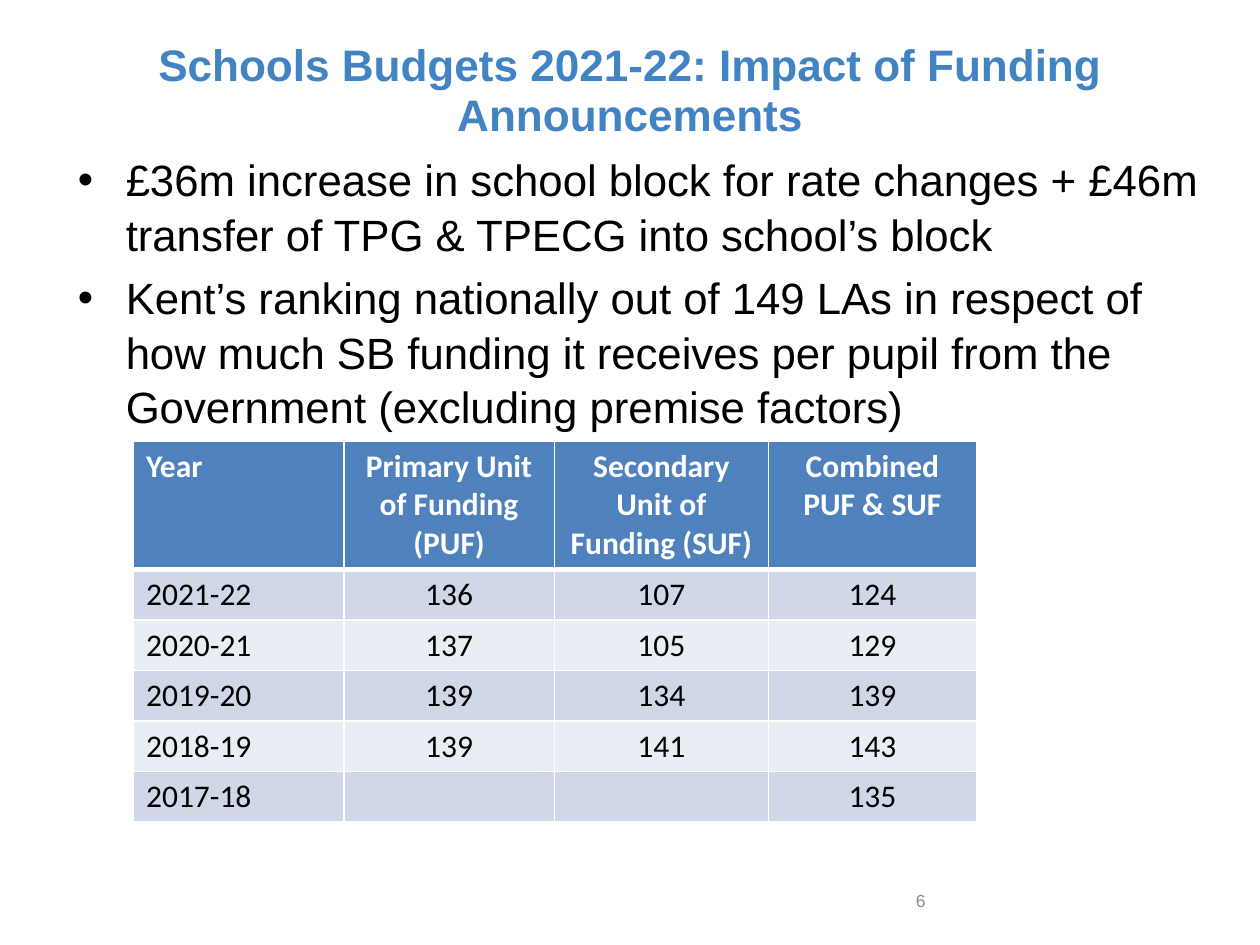
from pptx import Presentation
from pptx import util as u
from pptx.dml.color import RGBColor
from pptx.enum import text as t
from pptx.oxml import parse_xml
from pptx.oxml.ns import nsdecls

BULLETS = [
    "£36m increase in school block for rate changes + £46m transfer of TPG & TPECG into school’s block",
    "Kent’s ranking nationally out of 149 LAs in respect of how much SB funding it receives per pupil "
    "from the Government (excluding premise factors)",
]
RANKINGS = [
    ["Year", "Primary Unit of Funding (PUF)", "Secondary Unit of Funding (SUF)", "Combined PUF & SUF"],
    ["2021-22", "136", "107", "124"],
    ["2020-21", "137", "105", "129"],
    ["2019-20", "139", "134", "139"],
    ["2018-19", "139", "141", "143"],
    ["2017-18", "", "", "135"],
]
COLUMN_WIDTHS = [1.67, 1.67, 1.7, 1.65]
HEADER_HEIGHT = 1.02
ROW_HEIGHT = 0.4


def color(value):
    return RGBColor.from_string(value)


def write(paragraph, content, size=18, font="Arial", fill="000000", bold=False,
          align=t.PP_ALIGN.LEFT, spacing=None, before=None, after=None):
    paragraph.alignment = align
    paragraph.line_spacing = spacing
    if before is not None:
        paragraph.space_before = u.Pt(before)
    if after is not None:
        paragraph.space_after = u.Pt(after)
    paragraph.font.size = u.Pt(size)
    if content:
        run = paragraph.add_run()
        run.text = content
        run.font.size = u.Pt(size)
        run.font.name = font
        run.font.bold = bold
        run.font.color.rgb = color(fill)


def add_box(slide, box, anchor=t.MSO_ANCHOR.TOP):
    frame = slide.shapes.add_textbox(*map(u.Inches, box)).text_frame
    frame.word_wrap = True
    frame.vertical_anchor = anchor
    return frame


def add_title(slide, box):
    frame = add_box(slide, box, t.MSO_ANCHOR.MIDDLE)
    write(frame.paragraphs[0], "Schools Budgets 2021-22: Impact of Funding Announcements",
          size=25.2, fill="4283C4", bold=True, align=t.PP_ALIGN.CENTER, spacing=0.95)


def add_bullets(slide, box):
    frame = add_box(slide, box)
    for index, content in enumerate(BULLETS):
        paragraph = frame.add_paragraph() if index else frame.paragraphs[0]
        properties = paragraph._p.get_or_add_pPr()
        properties.set("marL", str(u.Inches(0.38)))
        properties.set("indent", str(u.Inches(-0.38)))
        properties.append(parse_xml(f'<a:buFont {nsdecls("a")} typeface="Arial"/>'))
        properties.append(parse_xml(f'<a:buChar {nsdecls("a")} char="•"/>'))
        write(paragraph, content, size=25, spacing=1.04, before=5 if index else 0)


def add_borders(cell, bottom):
    properties = cell._tc.get_or_add_tcPr()
    for index, (side, width) in enumerate([("L", 1), ("R", 1), ("T", 1), ("B", bottom)]):
        properties.insert(index, parse_xml(
            f'<a:ln{side} {nsdecls("a")} w="{u.Pt(width)}"><a:solidFill>'
            f'<a:srgbClr val="FFFFFF"/></a:solidFill></a:ln{side}>'))


def add_ranking_table(slide, left, top):
    height = HEADER_HEIGHT + ROW_HEIGHT * (len(RANKINGS) - 1)
    box = (left, top, sum(COLUMN_WIDTHS), height)
    table = slide.shapes.add_table(len(RANKINGS), len(COLUMN_WIDTHS), *map(u.Inches, box)).table
    for column, width in zip(table.columns, COLUMN_WIDTHS):
        column.width = u.Inches(width)
    for row, values in enumerate(RANKINGS):
        header = row == 0
        table.rows[row].height = u.Inches(HEADER_HEIGHT if header else ROW_HEIGHT)
        background = "4F81BD" if header else ("E9EDF4", "D0D8E8")[row % 2]
        for column, value in enumerate(values):
            cell = table.cell(row, column)
            cell.fill.solid()
            cell.fill.fore_color.rgb = color(background)
            add_borders(cell, 3 if header else 1)
            write(cell.text_frame.paragraphs[0], value, font="Calibri", bold=header,
                  fill="FFFFFF" if header else "000000",
                  align=t.PP_ALIGN.CENTER if column else t.PP_ALIGN.LEFT)


def add_slide_number(slide, box):
    frame = add_box(slide, box, t.MSO_ANCHOR.MIDDLE)
    write(frame.paragraphs[0], "6", size=10, fill="8C8C8C", after=6)


def main():
    presentation = Presentation()
    presentation.slide_width = u.Inches(10)
    presentation.slide_height = u.Inches(7.5)
    slide = presentation.slides.add_slide(presentation.slide_layouts[6])
    add_title(slide, (0.5, 0.3, 9, 0.85))
    add_bullets(slide, (0.52, 1.15, 9.17, 6.2))
    add_slide_number(slide, (7.17, 6.95, 2.33, 0.4))
    add_ranking_table(slide, 1.06, 3.5)
    presentation.save("out.pptx")


if __name__ == "__main__":
    main()
